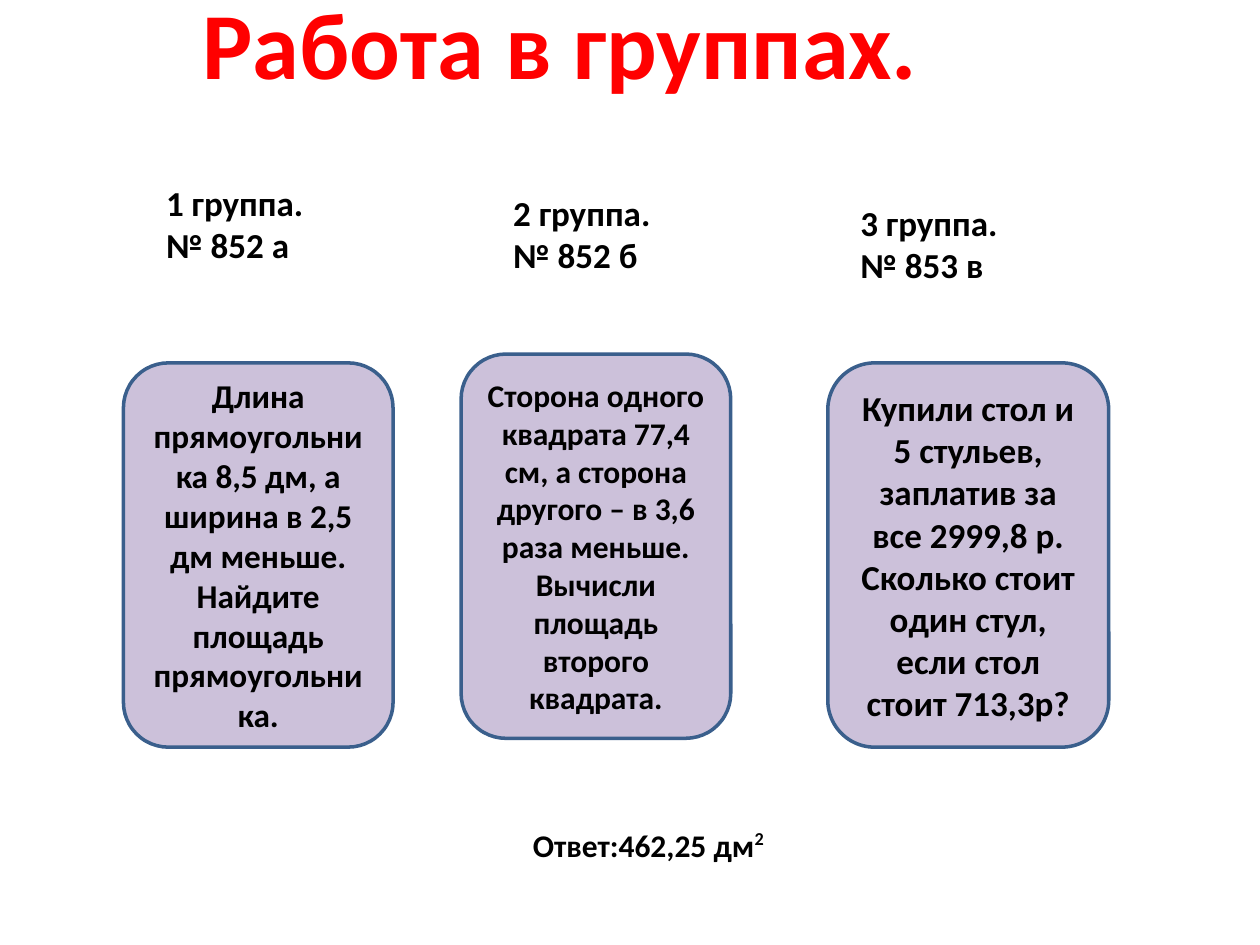
import pptx
import pptx.dml.color
import pptx.enum.shapes
import pptx.enum.text
import pptx.util

Inches = pptx.util.Inches
Pt = pptx.util.Pt
Align = pptx.enum.text.PP_ALIGN
Anchor = pptx.enum.text.MSO_ANCHOR
AutoSize = pptx.enum.text.MSO_AUTO_SIZE

RED = pptx.dml.color.RGBColor(0xFF, 0x00, 0x00)
BLACK = pptx.dml.color.RGBColor(0x00, 0x00, 0x00)
LILAC = pptx.dml.color.RGBColor(0xCC, 0xC1, 0xDA)
BLUE = pptx.dml.color.RGBColor(0x3A, 0x5F, 0x8C)


def add_run(paragraph, text, size=20, color=BLACK, font="Calibri", baseline=None):
    """Append a bold run; baseline is a raise in percent."""
    run = paragraph.add_run()
    run.text = text
    run.font.name = font
    run.font.size = Pt(size)
    run.font.bold = True
    run.font.color.rgb = color
    if baseline:
        run._r.get_or_add_rPr().set("baseline", str(baseline * 1000))


class GroupWorkSlide:
    """Holds the card style and the current slide."""

    card_fill = LILAC
    card_line = BLUE
    line_width = Pt(2)

    def __init__(self, presentation):
        self.slide = presentation.slides.add_slide(presentation.slide_layouts[0])
        subtitle = self.slide.placeholders[1]
        subtitle.element.getparent().remove(subtitle.element)

    def title(self, text, left, top, width, height):
        title = self.slide.shapes.title
        title.left, title.top = Inches(left), Inches(top)
        title.width, title.height = Inches(width), Inches(height)
        frame = title.text_frame
        frame.auto_size = AutoSize.NONE
        frame.vertical_anchor = Anchor.BOTTOM
        frame.paragraphs[0].alignment = Align.CENTER
        add_run(frame.paragraphs[0], text, size=54, color=RED)

    def card(self, text, left, top, width, height, size):
        card = self.slide.shapes.add_shape(
            pptx.enum.shapes.MSO_SHAPE.ROUNDED_RECTANGLE,
            Inches(left), Inches(top), Inches(width), Inches(height))
        card.shadow.inherit = False
        card.fill.solid()
        card.fill.fore_color.rgb = self.card_fill
        card.line.color.rgb = self.card_line
        card.line.width = self.line_width
        frame = card.text_frame
        frame.word_wrap = True
        frame.vertical_anchor = Anchor.MIDDLE
        frame.paragraphs[0].alignment = Align.CENTER
        add_run(frame.paragraphs[0], text, size=size)

    def text_box(self, left, top, width, height, wrap=True):
        box = self.slide.shapes.add_textbox(
            Inches(left), Inches(top), Inches(width), Inches(height))
        frame = box.text_frame
        frame.word_wrap = wrap
        frame.auto_size = AutoSize.SHAPE_TO_FIT_TEXT
        return frame

    def label(self, lines, left, top):
        frame = self.text_box(left, top, 1.46, 0.77)
        for index, line in enumerate(lines):
            paragraph = frame.add_paragraph() if index else frame.paragraphs[0]
            add_run(paragraph, line)

    def answer(self, text, power, left, top):
        paragraph = self.text_box(left, top, 2.19, 0.4, wrap=False).paragraphs[0]
        add_run(paragraph, text, size=18)
        add_run(paragraph, power, size=18, baseline=40)


def main():
    presentation = pptx.Presentation()
    presentation.slide_width, presentation.slide_height = Inches(10), Inches(7.5)
    page = GroupWorkSlide(presentation)
    page.title("Работа в группах.", 0.51, 0, 7.87, 0.83)

    # Group tasks: exercise, task, card left, top, width and text size
    tasks = [
        ("№ 852 а", "Длина прямоугольника 8,5 дм, а ширина в 2,5 дм меньше. "
         "Найдите площадь прямоугольника.", 0.98, 2.88, 2.14, 19),
        ("№ 852 б", "Сторона одного квадрата 77,4 см, а сторона другого – в 3,6 раза "
         "меньше. Вычисли площадь второго квадрата.", 3.66, 2.81, 2.14, 18),
        ("№ 853 в", "Купили стол и 5 стульев, заплатив за все 2999,8 р. Сколько стоит "
         "один стул, если стол стоит 713,3р?", 6.57, 2.88, 2.23, 20),
    ]
    for index, (exercise, task, left, top, width, size) in enumerate(tasks):
        page.card(task, left, top, width, 3.05, size)
        # Labels step evenly to the right and slightly down
        page.label([f"{index + 1} группа.", exercise],
                   1.22 + 2.755 * index, 1.39 + 0.08 * index)

    # Answer
    page.answer("Ответ:462,25 дм", "2", 4.13, 6.51)
    presentation.save("out.pptx")


if __name__ == "__main__":
    main()
